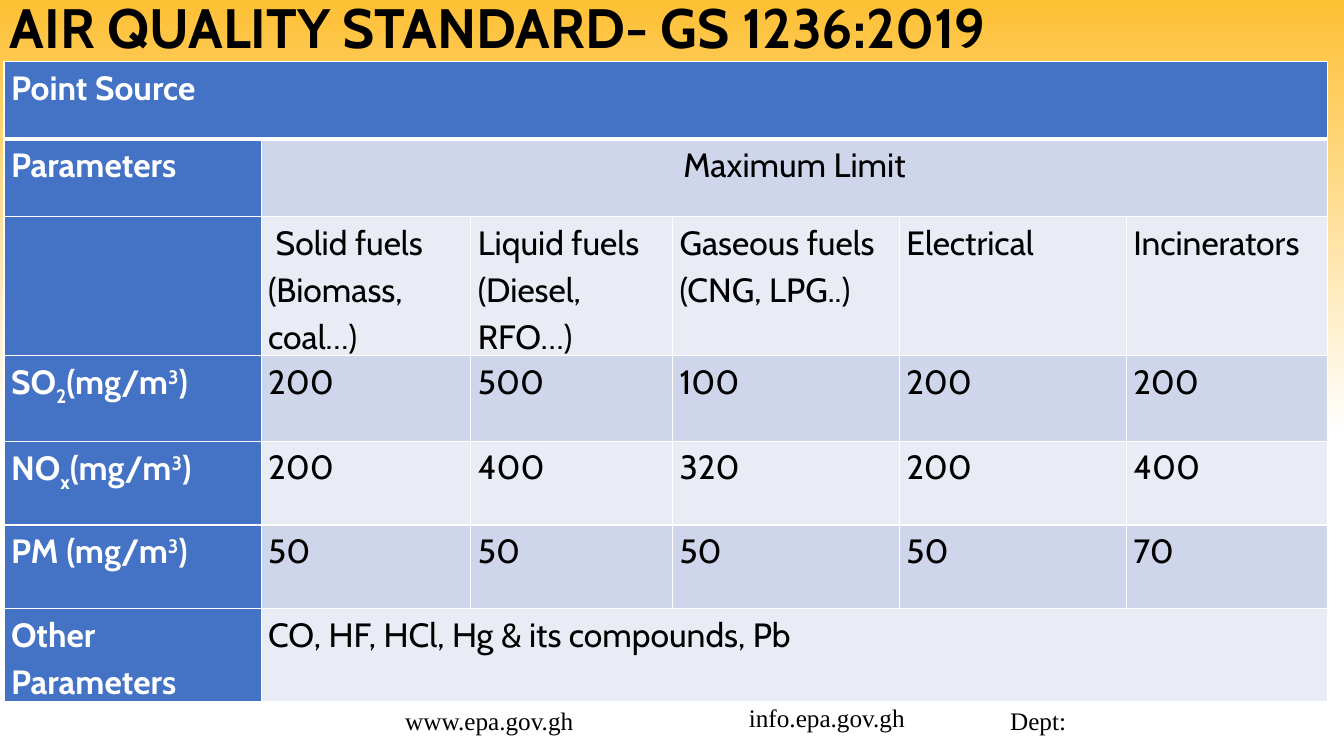
import pptx
import pptx.dml.color
import pptx.enum.text
import pptx.oxml
import pptx.oxml.ns
import pptx.util

Inches = pptx.util.Inches
Pt = pptx.util.Pt
ALIGN = pptx.enum.text.PP_ALIGN

THEME = {
    "heading_font": "Cabin", "footer_font": "Times New Roman",
    "title_size": 39.6, "table_size": 24, "footer_size": 18,
    "black": "000000", "white": "FFFFFF", "gold": "FEC034",
    "header": "4472C4", "bands": ("E9EBF5", "CFD5EA"),
}

TITLE = "AIR QUALITY STANDARD- GS 1236:2019"
FOOTERS = [
    ("www.epa.gov.gh", (3.92, 6.95, 2.17, 0.4)),
    ("info.epa.gov.gh", (7.33, 6.92, 2, 0.4)),
    ("Dept:", (9.92, 6.95, 2.5, 0.4)),
]

# A cell is plain text or a list of (text, baseline percent) runs.
UNIT = [("(mg/m", 0), ("3", 30), (")", 0)]
ROWS = [
    ["Point Source"],
    ["Parameters", "Maximum Limit"],
    ["", " Solid fuels (Biomass, coal…)", "Liquid fuels (Diesel, RFO…)",
     "Gaseous fuels (CNG, LPG..)", "Electrical", "Incinerators"],
    [[("SO", 0), ("2", -25)] + UNIT, "200", "500", "100", "200", "200"],
    [[("NO", 0), ("x", -25)] + UNIT, "200", "400", "320", "200", "400"],
    [[("PM ", 0)] + UNIT, "50", "50", "50", "50", "70"],
    ["Other Parameters", "CO, HF, HCl, Hg & its compounds, Pb"],
]
TABLE_LEFT, TABLE_TOP = 0.04, 0.61
COLUMN_WIDTHS = [2.55, 2.08, 2, 2.25, 2.25, 2]
ROW_HEIGHTS = [0.77, 0.77, 0.81, 0.85, 0.83, 0.83, 0.81]


def rgb(value):
    return pptx.dml.color.RGBColor.from_string(value)


def add_run(paragraph, text, font_name, size, color, bold=False, baseline=0):
    run = paragraph.add_run()
    run.text = text
    run.font.name = font_name
    run.font.size = Pt(size)
    run.font.bold = bold
    run.font.color.rgb = rgb(color)
    if baseline:
        run._r.get_or_add_rPr().set("baseline", str(baseline * 1000))


def add_text(slide, text, box, font_name, size, bold=False):
    shape = slide.shapes.add_textbox(*map(Inches, box))
    shape.text_frame.word_wrap = True
    add_run(shape.text_frame.paragraphs[0], text, font_name, size, THEME["black"], bold)
    return shape.text_frame


def set_borders(cell, widths):
    """Draw white left, right, top and bottom borders, widths in points."""
    properties = cell._tc.get_or_add_tcPr()
    for side, width in zip(("lnL", "lnR", "lnT", "lnB"), widths):
        properties.append(pptx.oxml.parse_xml(
            f'<a:{side} {pptx.oxml.ns.nsdecls("a")} w="{Pt(width)}"><a:solidFill>'
            f'<a:srgbClr val="{THEME["white"]}"/></a:solidFill></a:{side}>'))


def fill_cell(cell, content, is_header, alignment):
    cell.margin_left = cell.margin_right = Inches(0.07)
    cell.margin_top = cell.margin_bottom = 0
    paragraph = cell.text_frame.paragraphs[0]
    paragraph.alignment = alignment
    paragraph.line_spacing = 1.15
    paragraph.space_after = Pt(8)
    color = THEME["white" if is_header else "black"]
    runs = [(content, 0)] if isinstance(content, str) else content
    for text, baseline in runs:
        if text:
            add_run(paragraph, text, THEME["heading_font"], THEME["table_size"],
                    color, is_header, baseline)


def add_limits_table(slide):
    column_count = len(COLUMN_WIDTHS)
    table = slide.shapes.add_table(
        len(ROWS), column_count, Inches(TABLE_LEFT), Inches(TABLE_TOP),
        Inches(sum(COLUMN_WIDTHS)), Inches(sum(ROW_HEIGHTS))).table
    table.first_row = table.horz_banding = False
    for column, width in zip(table.columns, COLUMN_WIDTHS):
        column.width = Inches(width)
    for row_index, contents in enumerate(ROWS):
        table.rows[row_index].height = Inches(ROW_HEIGHTS[row_index])
        for column_index in range(column_count):
            cell = table.cell(row_index, column_index)
            is_header = row_index == 0 or column_index == 0
            set_borders(cell, (1, 1, 3 if row_index == 1 else 1, 3 if row_index == 0 else 1))
            cell.fill.solid()
            cell.fill.fore_color.rgb = rgb(
                THEME["header"] if is_header else THEME["bands"][row_index % 2])
            if column_index < len(contents):
                centred = row_index == 1 and column_index == 1
                fill_cell(cell, contents[column_index], is_header,
                          ALIGN.CENTER if centred else ALIGN.LEFT)
        if len(contents) < column_count:
            # The last cell given in a short row spans the remaining columns.
            table.cell(row_index, len(contents) - 1).merge(
                table.cell(row_index, column_count - 1))


def main():
    presentation = pptx.Presentation()
    presentation.slide_width = Inches(13.33)
    presentation.slide_height = Inches(7.5)
    slide = presentation.slides.add_slide(presentation.slide_layouts[6])

    background = slide.background.fill
    background.gradient()
    background.gradient_angle = 270
    stops = zip(background.gradient_stops, (("gold", 0), ("white", 0.57)))
    for stop, (color, position) in stops:
        stop.color.rgb = rgb(THEME[color])
        stop.position = position

    for text, box in FOOTERS:
        add_text(slide, text, box, THEME["footer_font"], THEME["footer_size"])
    title = add_text(slide, TITLE, (0, 0, 12.25, 0.61), THEME["heading_font"],
                     THEME["title_size"], bold=True)
    title.vertical_anchor = pptx.enum.text.MSO_ANCHOR.MIDDLE
    title.paragraphs[0].line_spacing = 0.9
    add_limits_table(slide)
    presentation.save("out.pptx")


if __name__ == "__main__":
    main()
